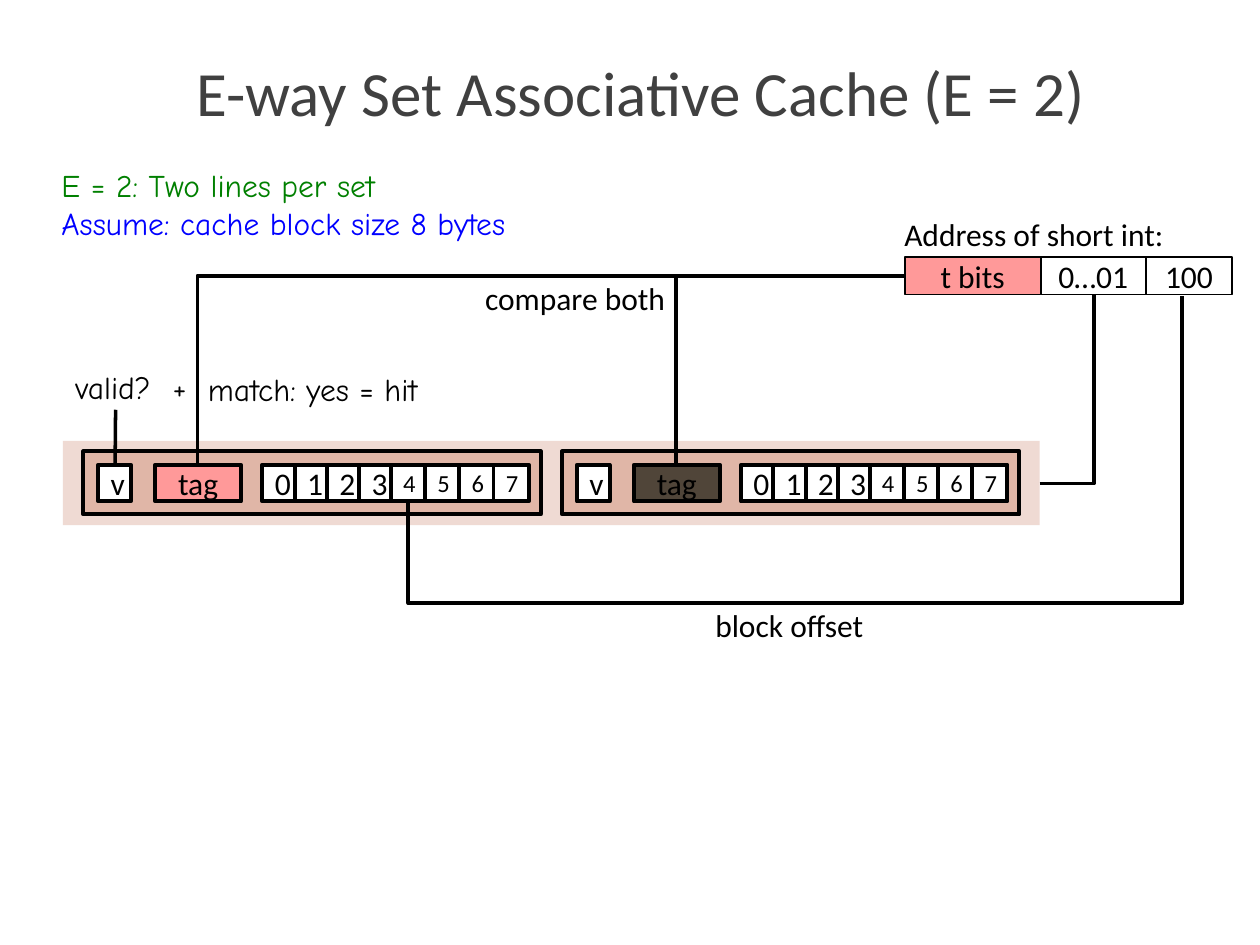
from dataclasses import dataclass
from typing import Any

from lxml.etree import SubElement
from pptx import Presentation
from pptx.dml.color import RGBColor
from pptx.enum.shapes import MSO_CONNECTOR, MSO_SHAPE
from pptx.enum.text import MSO_ANCHOR, PP_ALIGN
from pptx.oxml.ns import qn
from pptx.util import Cm, Pt


def color(hex_text):
    return RGBColor.from_string(hex_text)


def write_text(paragraph, text, *, font="Calibri", size=18, ink="000000",
               alignment=PP_ALIGN.LEFT, tab=None):
    paragraph.alignment = alignment
    if tab:
        tabs = SubElement(paragraph._p.get_or_add_pPr(), qn("a:tabLst"))
        SubElement(tabs, qn("a:tab"), pos=str(Cm(tab)), algn="l")
    run = paragraph.add_run()
    run.text = text
    run.font.name = font
    run.font.size = Pt(size)
    run.font.color.rgb = color(ink)


@dataclass
class CacheSlide:
    slide: Any
    ink: str = "000000"
    hand_font: str = "Comic Neue"
    wire_width: float = 2
    cell_width: float = 2.25

    def title(self, text, left, top, width, height):
        title = self.slide.shapes.title
        title.left, title.top = Cm(left), Cm(top)
        title.width, title.height = Cm(width), Cm(height)
        title.text_frame.vertical_anchor = MSO_ANCHOR.MIDDLE
        write_text(title.text_frame.paragraphs[0], text, size=36,
                   ink="404040", alignment=PP_ALIGN.CENTER)

    def box(self, left, top, width, height, fill, text="", size=18, line_width=None):
        shape = self.slide.shapes.add_shape(
            MSO_SHAPE.RECTANGLE, Cm(left), Cm(top), Cm(width), Cm(height))
        shape.shadow.inherit = False
        shape.fill.solid()
        shape.fill.fore_color.rgb = color(fill)
        if line_width:
            shape.line.color.rgb = color(self.ink)
            shape.line.width = Pt(line_width)
        else:
            shape.line.fill.background()
        if text:
            shape.text_frame.vertical_anchor = MSO_ANCHOR.MIDDLE
            write_text(shape.text_frame.paragraphs[0], text, size=size,
                       ink=self.ink, alignment=PP_ALIGN.CENTER)

    def label(self, left, top, width, height, *lines, **text_format):
        frame = self.slide.shapes.add_textbox(
            Cm(left), Cm(top), Cm(width), Cm(height)).text_frame
        frame.word_wrap = True
        for index, (text, ink) in enumerate(lines):
            paragraph = frame.add_paragraph() if index else frame.paragraphs[0]
            write_text(paragraph, text, ink=ink, **text_format)

    def wire(self, start, end, kind=MSO_CONNECTOR.STRAIGHT):
        connector = self.slide.shapes.add_connector(
            kind, *(Cm(value) for value in (*start, *end)))
        connector.line.color.rgb = color(self.ink)
        connector.line.width = Pt(self.wire_width)
        SubElement(connector._element.spPr, qn("a:effectLst"))
        return connector._element.spPr

    def corner(self, start, end):
        properties = self.wire(start, end, MSO_CONNECTOR.ELBOW)
        properties.find(qn("a:prstGeom")).set("prst", "bentConnector2")

    def loop_below(self, start, end, bottom):
        across, down = start[0] - end[0], end[1] - start[1]
        middle_x, middle_y = (start[0] + end[0]) / 2, (start[1] + end[1]) / 2
        properties = self.wire((middle_x - down / 2, middle_y - across / 2),
                               (middle_x + down / 2, middle_y + across / 2),
                               MSO_CONNECTOR.ELBOW)
        properties.find(qn("a:xfrm")).set("rot", "5400000")
        geometry = properties.find(qn("a:prstGeom"))
        adjustments = geometry.find(qn("a:avLst"))
        if adjustments is None:
            adjustments = SubElement(geometry, qn("a:avLst"))
        ratio = round((bottom - start[1]) / down * 100000)
        SubElement(adjustments, qn("a:gd"), name="adj1", fmla=f"val {ratio}")

    def cache_line(self, left, tag_fill):
        cell_top, cell_height = 9.37, 0.74
        self.box(left, 9.1, 9.22, 1.27, "E0B6A7", line_width=self.cell_width)
        cells = [(0.3, 0.66, "FFFFFF", "v", 18), (1.45, 1.73, tag_fill, "tag", 18)]
        cells += [(3.61 + 0.65 * byte, 0.66, "FFFFFF", str(byte), 18)
                  for byte in range(4)]
        cells += [(6.2 + 0.69 * (byte - 4), 0.71, "FFFFFF", str(byte), 14)
                  for byte in range(4, 8)]
        for offset, width, fill, text, size in cells:
            self.box(left + offset, cell_top, width, cell_height, fill, text,
                     size, self.cell_width)


def main():
    presentation = Presentation()
    presentation.slide_width, presentation.slide_height = Cm(25.4), Cm(19.05)
    cache = CacheSlide(presentation.slides.add_slide(presentation.slide_layouts[5]))
    cache.title("E-way Set Associative Cache (E = 2)", 0.99, 0.79, 23.85, 2.11)

    left = 18.24
    for text, width, fill in (("t bits", 2.74, "FF9999"),
                              ("0…01", 2.12, "FFFFFF"),
                              ("100", 1.74, "FFFFFF")):
        cache.box(left, 5.18, width, 0.76, fill, text, line_width=1)
        left += width

    cache.box(1.27, 8.89, 19.69, 1.7, "EFDAD3")
    for line_left, tag_fill in ((1.68, "FF9999"), (11.33, "504539")):
        cache.cache_line(line_left, tag_fill)
        cache.corner((18.24, 5.56), (line_left + 2.3, 9.37))

    cache.corner((20.96, 9.75), (22.05, 5.93))
    cache.loop_below((23.83, 5.97), (8.23, 10.13), 12.16)
    cache.wire((2.33, 8.26), (2.32, 9.37))

    cache.label(17.98, 4.22, 5.89, 0.76, ("Address of short int:", cache.ink))
    cache.label(9.53, 5.51, 4.24, 0.76, ("compare both", cache.ink))
    cache.label(14.17, 12.09, 3.61, 0.76, ("block offset", cache.ink))
    cache.label(1.27, 7.29, 2.92, 1.02, ("valid?\t+", cache.ink),
                font=cache.hand_font, tab=1.96)
    cache.label(3.94, 7.34, 5.28, 1.02, ("match: yes = hit", cache.ink),
                font=cache.hand_font)
    cache.label(0.99, 3.23, 10.46, 1.8, ("E = 2: Two lines per set", "008000"),
                ("Assume: cache block size 8 bytes", "0000FF"), font=cache.hand_font)
    presentation.save("out.pptx")


if __name__ == "__main__":
    main()
